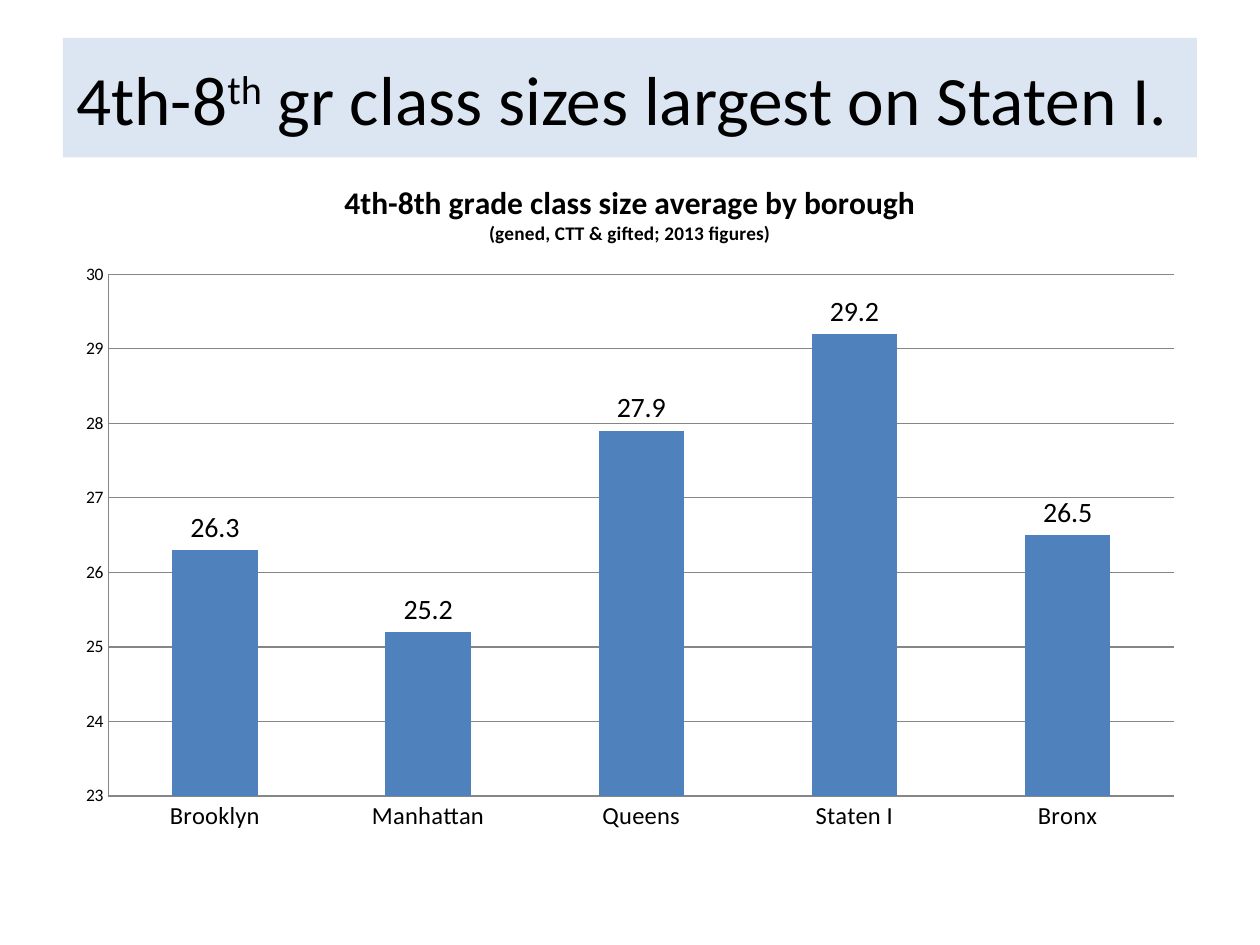
from lxml import etree
from pptx import Presentation
from pptx.chart.data import CategoryChartData
from pptx.dml.color import RGBColor
from pptx.enum.chart import XL_CHART_TYPE, XL_LABEL_POSITION, XL_TICK_MARK
from pptx.enum.shapes import MSO_SHAPE
from pptx.enum.text import MSO_ANCHOR, PP_ALIGN
from pptx.oxml.ns import qn
from pptx.util import Pt


def color(hex_string):
    return RGBColor.from_string(hex_string)


def set_font(font, size, bold=False):
    font.name = "Calibri"
    font.size = Pt(size)
    font.bold = bold
    font.color.rgb = color("000000")


deck = Presentation()
deck.slide_width, deck.slide_height = Pt(720), Pt(540)
page = deck.slides.add_slide(deck.slide_layouts[6])

# Headline band
band = page.shapes.add_shape(MSO_SHAPE.RECTANGLE, Pt(36), Pt(21.6), Pt(648), Pt(68.4))
band.shadow.inherit = False
band.fill.solid()
band.fill.fore_color.rgb = color("DCE6F2")
band.line.fill.background()
band.text_frame.word_wrap = True
band.text_frame.vertical_anchor = MSO_ANCHOR.MIDDLE
para = band.text_frame.paragraphs[0]
para.alignment = PP_ALIGN.CENTER
set_font(para.font, 39.6)
for text, baseline in (("4th-8", 0), ("th", 30000), (" gr class sizes largest on Staten I. ", 0)):
    span = para.add_run()
    span.text = text
    if baseline:
        span.font._element.set("baseline", str(baseline))

# Class size chart
data = CategoryChartData(number_format="#,##0.0")
data.categories = ["Brooklyn", "Manhattan", "Queens", "Staten I", "Bronx"]
data.add_series("Series 1", [26.3, 25.2, 27.9, 29.2, 26.5])
chart = page.shapes.add_chart(
    XL_CHART_TYPE.COLUMN_CLUSTERED, Pt(36), Pt(90), Pt(648), Pt(392.4), data
).chart
set_font(chart.font, 10)
chart.has_legend = False

# Chart title
chart.has_title = True
title = chart.chart_title.text_frame
title.text = "4th-8th grade class size average by borough\n(gened, CTT & gifted; 2013 figures)"
for para, size in zip(title.paragraphs, (18, 11)):
    set_font(para.font, size, bold=True)
chart.chart_title.include_in_layout = False

# Columns and their labels
plot = chart.plots[0]
plot.gap_width = 150
plot.vary_by_categories = False
columns = plot.series[0].format.fill
columns.solid()
columns.fore_color.rgb = color("4F81BD")
plot.has_data_labels = True
labels = plot.data_labels
labels.show_value = True
labels.number_format = "#,##0.0"
labels.number_format_is_linked = False
labels.position = XL_LABEL_POSITION.OUTSIDE_END
set_font(labels.font, 16)

# Axes
values = chart.value_axis
values.minimum_scale, values.maximum_scale, values.major_unit = 23, 30, 1
values.has_major_gridlines = True
values.tick_labels.number_format = "0"
values.tick_labels.number_format_is_linked = False
for axis, size in ((chart.category_axis, 14), (values, 10)):
    axis.major_tick_mark = axis.minor_tick_mark = XL_TICK_MARK.NONE
    set_font(axis.tick_labels.font, size)
for line in (chart.category_axis.format.line, values.format.line, values.major_gridlines.format.line):
    line.color.rgb = color("868686")
    line.width = Pt(0.75)

# Plot area position as fractions of the chart
plot_area = chart._chartSpace.chart.plotArea
layout = plot_area.find(qn("c:layout"))
if layout is None:
    layout = etree.Element(qn("c:layout"))
    plot_area.insert(0, layout)
manual = etree.SubElement(layout, qn("c:manualLayout"))
for name, value in (("layoutTarget", "inner"), ("xMode", "edge"), ("yMode", "edge"),
                    ("x", "0.04"), ("y", "0.17"), ("w", "0.94"), ("h", "0.76")):
    etree.SubElement(manual, qn("c:" + name)).set("val", value)

deck.save("out.pptx")
